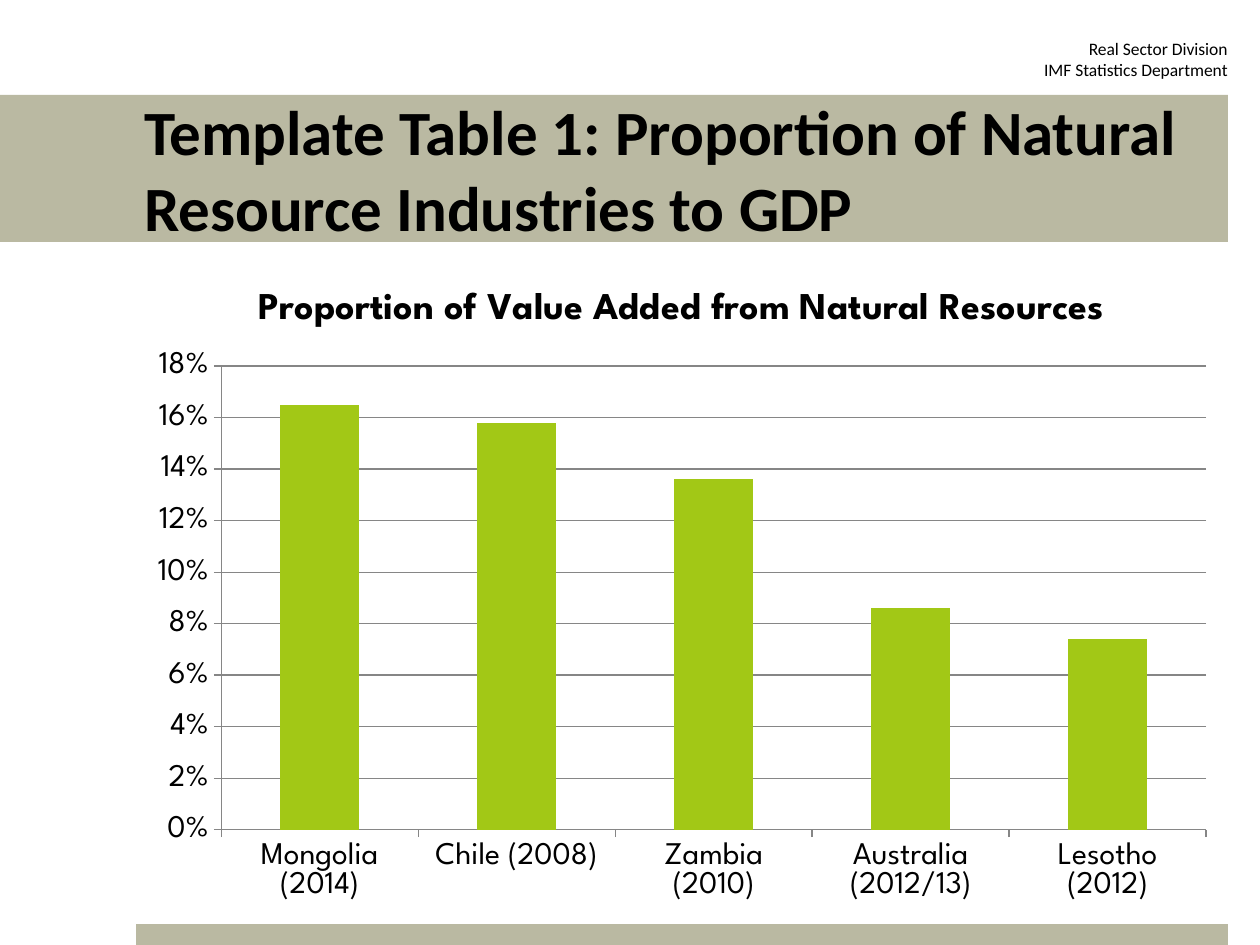
from pptx import Presentation
from pptx.chart.data import CategoryChartData
from pptx.dml.color import RGBColor
from pptx.enum.chart import XL_CHART_TYPE as ChartType, XL_TICK_MARK as Tick
from pptx.enum.shapes import MSO_SHAPE as Preset
from pptx.enum.text import MSO_ANCHOR as Anchor, MSO_AUTO_SIZE as AutoSize, PP_ALIGN as Align
from pptx.util import Emu, Pt

BAND, BLACK, GREEN, GREY = "BAB9A2", "000000", "A2C816", "868686"


def px(*lengths):
    """Turn pixels, 126 to the inch, into a list of EMU lengths."""
    return [Emu(round(n * 914400 / 126)) for n in lengths]


def style(font, name, size, bold=False):
    font.name, font.size, font.bold = name, Pt(size), bold
    font.color.rgb = RGBColor.from_string(BLACK)


prs = Presentation()
prs.slide_width, prs.slide_height = px(1260, 945)
slide = prs.slides.add_slide(prs.slide_layouts[5])
shapes = slide.shapes

# Bands: the heading and the strip at the foot
heading = shapes.title
heading.left, heading.top, heading.width, heading.height = px(0, 95, 1228, 147)
foot = shapes.add_shape(Preset.RECTANGLE, *px(136, 924, 1092, 21))
foot.shadow.inherit = False
foot.line.fill.background()
for band in (heading, foot):
    band.fill.solid()
    band.fill.fore_color.rgb = RGBColor.from_string(BAND)

frame = heading.text_frame
frame.text = "Template Table 1: Proportion of Natural Resource Industries to GDP"
frame.word_wrap = True
frame.auto_size = AutoSize.NONE
frame.vertical_anchor = Anchor.MIDDLE
frame.margin_left, frame.margin_top, frame.margin_right, frame.margin_bottom = px(144, 5, 38, 5)
frame.paragraphs[0].alignment = Align.LEFT
style(frame.paragraphs[0].font, "Calibri", 36, bold=True)

# Department name
department = shapes.add_textbox(*px(935, 32, 305, 55)).text_frame
department.word_wrap = True
department.text = "Real Sector Division\vIMF Statistics Department"
department.paragraphs[0].alignment = Align.RIGHT
style(department.paragraphs[0].font, "Calibri", 10)

# Chart of shares by country
shares = {
    "Mongolia (2014)": 0.165,
    "Chile (2008)": 0.158,
    "Zambia (2010)": 0.136,
    "Australia (2012/13)": 0.086,
    "Lesotho (2012)": 0.074,
}
caption = "Proportion of Value Added from Natural Resources"
data = CategoryChartData(number_format="0.0%")
data.categories = list(shares)
data.add_series(caption, list(shares.values()))
chart = shapes.add_chart(ChartType.COLUMN_CLUSTERED, *px(136, 262, 1092, 651), data).chart
style(chart.font, "League Spartan", 18)
chart.has_legend = False
chart.has_title = True
chart.chart_title.include_in_layout = False
chart.chart_title.text_frame.text = caption
style(chart.chart_title.text_frame.paragraphs[0].font, "League Spartan", 21.6, bold=True)

plot = chart.plots[0]
plot.gap_width = 150
plot.vary_by_categories = False
columns = plot.series[0].format.fill
columns.solid()
columns.fore_color.rgb = RGBColor.from_string(GREEN)

countries, percent = chart.category_axis, chart.value_axis
percent.minimum_scale, percent.maximum_scale, percent.major_unit = 0, 0.18, 0.02
percent.has_major_gridlines = True
percent.tick_labels.number_format = "0%"
percent.tick_labels.number_format_is_linked = False
for axis in (countries, percent):
    axis.major_tick_mark, axis.minor_tick_mark = Tick.OUTSIDE, Tick.NONE
for ruled in (countries, percent, percent.major_gridlines):
    ruled.format.line.color.rgb = RGBColor.from_string(GREY)
    ruled.format.line.width = Pt(0.75)

prs.save("out.pptx")
